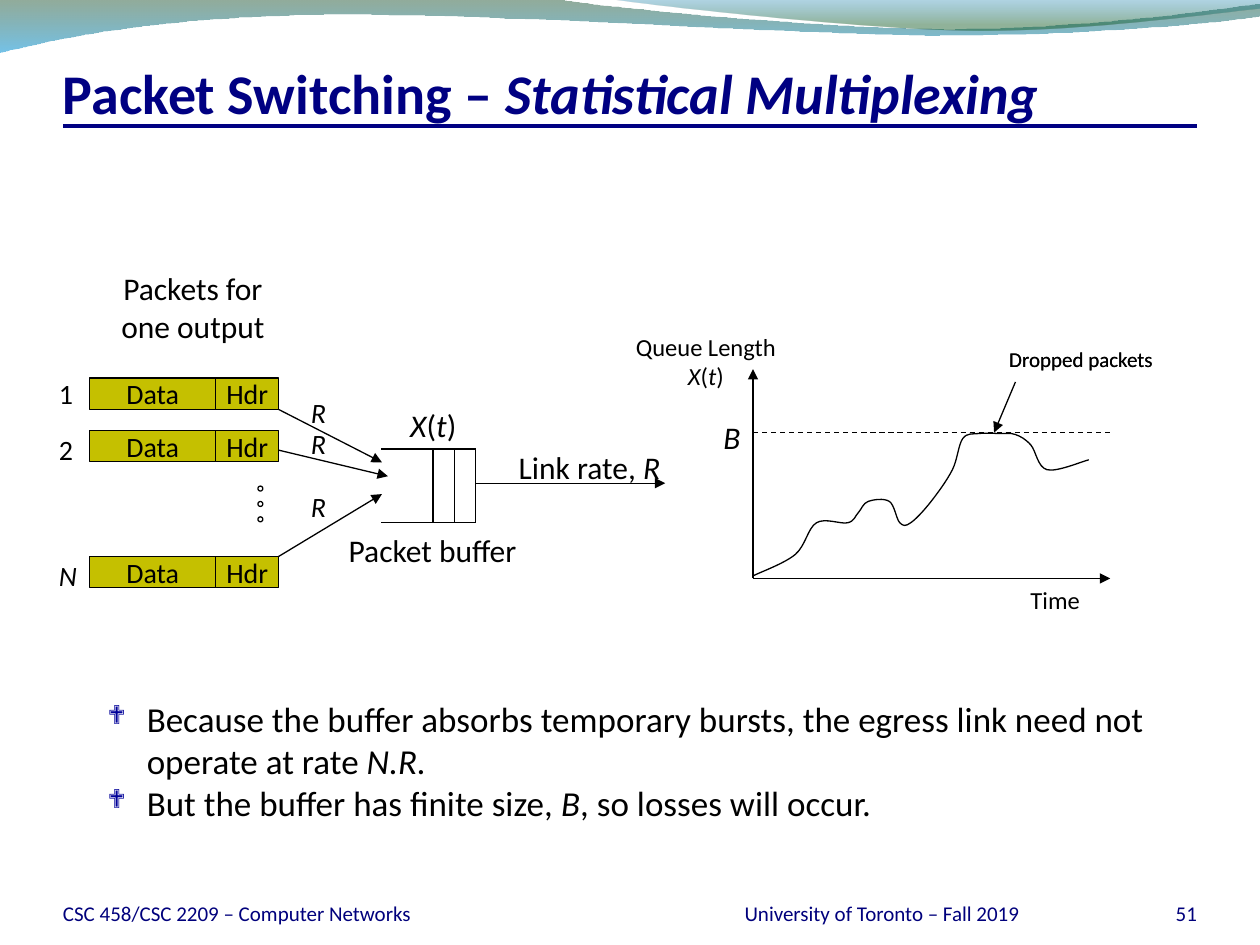
from lxml.etree import SubElement as Sub
from pptx import Presentation as Deck
from pptx.dml.color import RGBColor as Rgb
from pptx.enum.dml import MSO_LINE as Dash
from pptx.enum.shapes import MSO_CONNECTOR as Conn, MSO_SHAPE as Kind
from pptx.enum.text import MSO_ANCHOR as Anchor, PP_ALIGN as Align
from pptx.oxml.ns import qn
from pptx.util import Cm, Pt

BLACK = Rgb(0x00, 0x00, 0x00)
NAVY = Rgb(0x00, 0x00, 0x82)
FOOT = Rgb(0x00, 0x00, 0x7C)
MARK = Rgb(0x00, 0x00, 0x99)
OLIVE = Rgb(0xC5, 0xC0, 0x00)
FOREST = Rgb(0x0F, 0x46, 0x1E)
SKY = Rgb(0x00, 0x90, 0xD6)
OCEAN = Rgb(0x00, 0x76, 0xAF)
GREEN = Rgb(0x0D, 0x58, 0x21)
FONT = "Calibri"

BAND = [(0, -0.02), (11.18, -0.02), [(12.09, 0.15), (16.87, 0.58), (19.25, 0.58)],
        [(21.67, 0.58), (24.33, 0.23), (25.4, 0.08)], (25.42, 0.33),
        [(24.97, 0.41), (22.1, 0.71), (18.95, 0.71)],
        [(15.8, 0.69), (9.7, 0.25), (6.53, 0.3)],
        [(3.28, 0.33), (1.17, 0.76), (-0.02, 1.05)], (0, -0.02)]
CREST = [(12.17, -0.02), [(12.93, 0.1), (17.32, 0.58), (19.53, 0.61)],
         [(21.74, 0.64), (24.41, 0.28), (25.4, 0.18)], (25.4, -0.02),
         (12.17, -0.02)]
QUEUE = [(15.18, 11.61), (16.03, 11.18), (16.46, 10.54), (17.09, 10.54),
         (17.3, 10.34), (17.5, 10.11), (17.93, 10.11), (18.14, 10.54),
         (18.36, 10.54), (18.77, 10.11), (19.2, 9.47), (19.41, 8.84),
         (19.74, 8.74), (20.14, 8.74), (20.47, 8.76), (20.78, 8.97),
         (21.11, 9.47), (21.95, 9.27)]


def cms(nums):
    """Turn plain numbers into lengths."""
    return [Cm(n) for n in nums]


def smooth(knots):
    """Return a route of curves that runs smoothly through the knots."""
    ends = [knots[0], *knots, knots[-1]]
    route = [knots[0]]
    for p, a, b, n in zip(ends, ends[1:], ends[2:], ends[3:]):
        route.append([tuple(s + (e - q) / 6 for q, s, e in zip(p, a, b)),
                      tuple(e - (f - s) / 6 for s, e, f in zip(a, b, n)), b])
    return route


def outline(slide, route, close):
    """Draw a freeform along a route of points and cubic curves."""
    ends = [step[-1] if isinstance(step, list) else step for step in route]
    spots = [tuple(cms(end)) for end in ends]
    form = slide.shapes.build_freeform(*spots[0])
    form.add_line_segments(spots[1:], close=close)
    shape = form.convert_to_shape()
    shape.shadow.inherit = False
    for node, step in zip(list(shape.element.iter(qn("a:lnTo"))), route[1:]):
        if isinstance(step, list):
            node.tag = qn("a:cubicBezTo")
            for k, (x, y) in enumerate(step[:2]):
                node.insert(k, Sub(node, qn("a:pt"), x=str(Cm(x) - shape.left),
                                   y=str(Cm(y) - shape.top)))
    return shape


def wave(slide, route, stops):
    """Draw a see-through wave shaded from top to bottom."""
    shape = outline(slide, route, True)
    shape.line.fill.background()
    shape.fill.gradient()
    shape.fill.gradient_angle = 270
    for stop, (place, color, alpha) in zip(shape.fill.gradient_stops, stops):
        stop.position = place
        stop.color.rgb = color
    nodes = shape.element.spPr.iter(qn("a:srgbClr"))
    for node, (place, color, alpha) in zip(nodes, stops):
        Sub(node, qn("a:alpha"), val=str(alpha * 1000))


def pen(line, color=BLACK, width=0.75):
    """Set the colour and width of a line."""
    line.color.rgb = color
    line.width = Pt(width)


def wire(slide, start, end, arrow=False, dash=False, color=BLACK, width=0.75):
    """Draw a straight line, with an arrowhead if asked."""
    link = slide.shapes.add_connector(Conn.STRAIGHT, *cms(start + end))
    pen(link.line, color, width)
    if dash:
        link.line.dash_style = Dash.DASH
    if arrow:
        Sub(link.line._get_or_add_ln(), qn("a:tailEnd"), type="triangle")
    Sub(link.element.spPr, qn("a:effectLst"))


def write(para, words, size, color=BLACK, bold=False):
    """Add runs to a paragraph; words between stars are italic."""
    for k, part in enumerate(words.split("*")):
        if part:
            run = para.add_run()
            run.text = part
            font = run.font
            font.name, font.size, font.bold = FONT, Pt(size), bold
            font.italic = k % 2 == 1
            font.color.rgb = color


def label(slide, box, lines, size, align=Align.LEFT, wrap=False,
          color=BLACK, bold=False, flush=False):
    """Add a text box with one paragraph for each line."""
    frame = slide.shapes.add_textbox(*cms(box)).text_frame
    frame.word_wrap = wrap
    if flush:
        frame.vertical_anchor = Anchor.BOTTOM
        frame.margin_left = frame.margin_right = 0
        frame.margin_top = frame.margin_bottom = 0
    for k, words in enumerate(lines):
        para = frame.add_paragraph() if k else frame.paragraphs[0]
        para.alignment = align
        write(para, words, size, color, bold)
    return frame


def points(slide, box, lines):
    """Add a bulleted list."""
    for para in label(slide, box, lines, 20, wrap=True).paragraphs:
        props = para._p.get_or_add_pPr()
        props.set("marL", str(Cm(0.79)))
        props.set("indent", str(Cm(-0.79)))
        Sub(Sub(props, qn("a:buClr")), qn("a:srgbClr"), val=str(MARK))
        Sub(props, qn("a:buSzPct"), val="75000")
        Sub(props, qn("a:buFont"), typeface="Wingdings")
        Sub(props, qn("a:buChar"), char="❖")


def cell(slide, left, top, width, words):
    """Draw one field of a packet."""
    shape = slide.shapes.add_shape(Kind.RECTANGLE, *cms((left, top, width, 0.63)))
    shape.shadow.inherit = False
    shape.fill.solid()
    shape.fill.fore_color.rgb = OLIVE
    pen(shape.line)
    frame = shape.text_frame
    frame.word_wrap = False
    frame.vertical_anchor = Anchor.MIDDLE
    frame.paragraphs[0].alignment = Align.CENTER
    write(frame.paragraphs[0], words, 16)


def frame_page(slide):
    """Add the waves, title, rule and footer."""
    wave(slide, BAND, [(0, FOREST, 45), (1, SKY, 55)])
    wave(slide, CREST, [(0, OCEAN, 30), (0.8, GREEN, 45)])
    wire(slide, (1.27, 2.54), (24.13, 2.54), color=NAVY, width=2.25)
    title = label(slide, (1.27, 0.84, 22.86, 1.7),
                  ["Packet Switching – *Statistical Multiplexing*"], 32,
                  wrap=True, color=NAVY, bold=True, flush=True)
    title.margin_top = Cm(0.13)
    for left, width, words, align in (
            (1.27, 12.27, "CSC 458/CSC 2209 – Computer Networks", Align.LEFT),
            (13.76, 8.04, "University of Toronto – Fall 2019", Align.CENTER),
            (22.02, 2.11, "51", Align.RIGHT)):
        label(slide, (left, 17.65, width, 1.02), [words], 12, align,
              wrap=True, color=FOOT, flush=True)


def buffer(slide):
    """Draw the packets that flow into the buffer and its link."""
    for y in (9.05, 10.54):
        wire(slide, (7.69, y), (9.59, y))
    for k in range(3):
        x = 9.59 - 0.43 * k
        wire(slide, (x, 9.05), (x, 10.54))
    wire(slide, (9.6, 9.74), (13.41, 9.74), arrow=True)
    for name, top, side, start, end, rate in (
            ("1", 7.62, 7.47, (5.18, 8.03), (7.7, 9.32), 7.85),
            ("2", 8.68, 8.6, (5.18, 8.97), (7.82, 9.6), 8.48),
            ("*N*", 11.22, 11.14, (5.05, 11.56), (7.7, 9.96), 9.75)):
        wire(slide, start, end, arrow=True)
        cell(slide, 1.81, top, 2.54, "Data")
        cell(slide, 4.35, top, 1.27, "Hdr")
        label(slide, (0.94, side, 0.84, 0.94), [name], 16)
        label(slide, (6.02, rate, 0.81, 0.94), ["*R*"], 16)
    group = slide.shapes.add_group_shape()
    for k in range(3):
        dot = group.shapes.add_shape(Kind.OVAL, *cms((5.2, 9.8 + 0.31 * k, 0.1, 0.1)))
        dot.shadow.inherit = False
        dot.fill.background()
        pen(dot.line)
    label(slide, (10.16, 8.91, 3.4, 1.02), ["Link rate, *R*"], 18, Align.RIGHT)
    label(slide, (8, 8.07, 1.45, 1.02), ["*X*(*t*)"], 18, Align.RIGHT)
    label(slide, (6.65, 10.59, 4.14, 1.02), ["Packet buffer"], 18, Align.CENTER, True)
    label(slide, (1.82, 5.3, 4.14, 1.78), ["Packets for one output"], 18,
          Align.CENTER, True)


def graph(slide):
    """Draw the queue length over time."""
    base = (15.18, 11.66)
    wire(slide, base, (15.18, 7.44), arrow=True)
    wire(slide, base, (22.38, 11.66), arrow=True)
    wire(slide, (15.18, 8.72), (22.38, 8.72), dash=True)
    curve = outline(slide, smooth(QUEUE), False)
    curve.fill.background()
    pen(curve.line)
    wire(slide, (20.47, 7.7), (20.04, 8.72), arrow=True)
    for left in (18.36, 19.35):
        label(slide, (left, 6.86, 23.49 - left, 0.76), ["Dropped packets"], 12,
              Align.RIGHT, True)
    label(slide, (14.32, 8.31, 0.86, 1.02), ["*B*"], 18, Align.RIGHT)
    label(slide, (12.16, 6.57, 4.14, 1.45), ["Queue Length", "*X*(*t*)"], 14,
          Align.CENTER, True)
    label(slide, (19.78, 11.66, 2.24, 0.84), ["Time"], 14, Align.RIGHT, True)


def main():
    """Build the slide and save it."""
    deck = Deck()
    deck.slide_width, deck.slide_height = Cm(25.4), Cm(19.05)
    slide = deck.slides.add_slide(deck.slide_layouts[6])
    frame_page(slide)
    buffer(slide)
    graph(slide)
    points(slide, (1.92, 13.93, 22.23, 2.79), [
        "Because the buffer absorbs temporary bursts, the egress link need not "
        "operate at rate *N.R.*",
        "But the buffer has finite size, *B*, so losses will occur."])
    deck.save("out.pptx")


if __name__ == "__main__":
    main()
